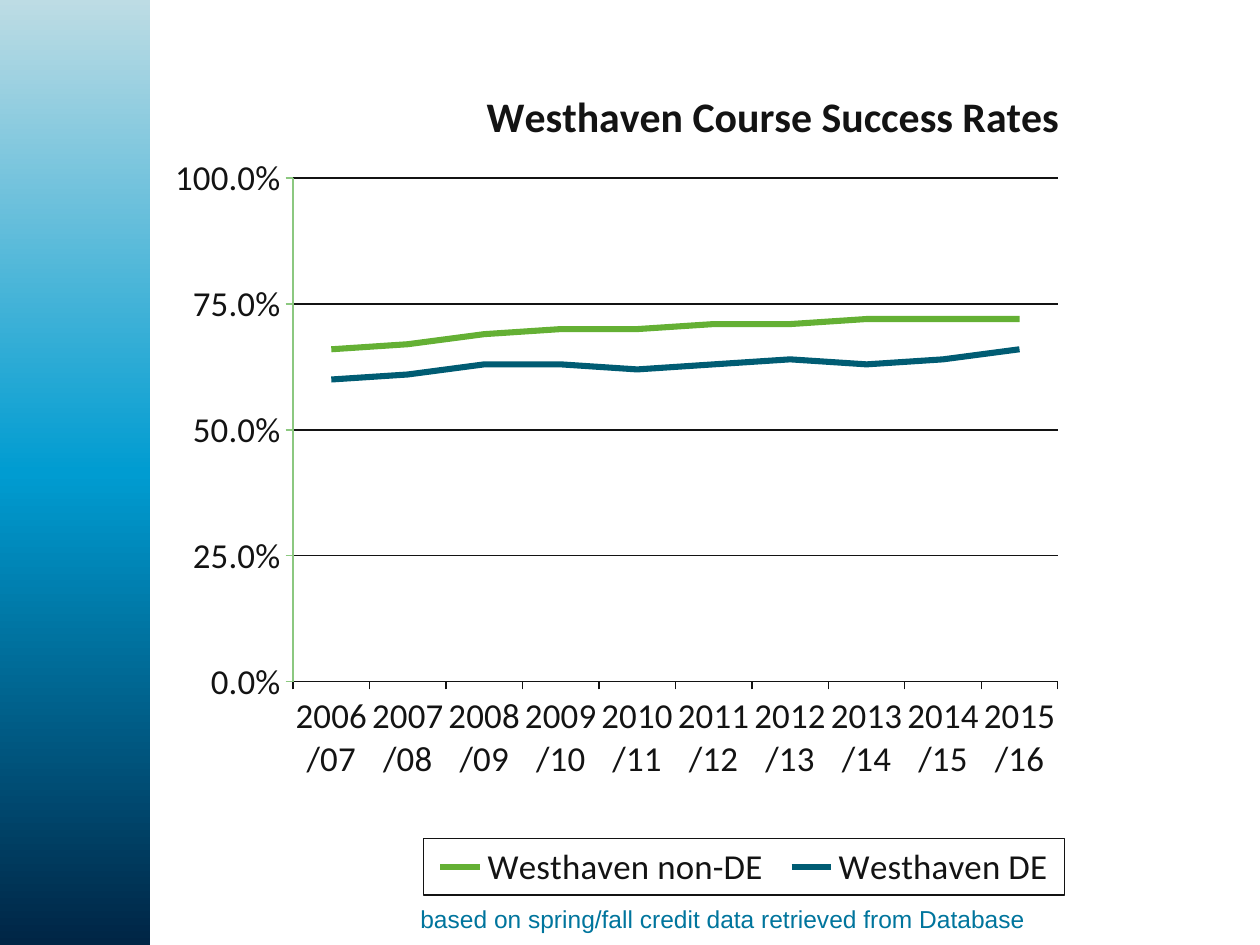
from copy import deepcopy

from pptx import Presentation
from pptx.chart.data import CategoryChartData
from pptx.dml.color import RGBColor
from pptx.enum.chart import XL_CHART_TYPE, XL_LEGEND_POSITION, XL_TICK_MARK
from pptx.enum.shapes import MSO_SHAPE
from pptx.oxml import parse_xml
from pptx.oxml.ns import nsdecls, qn
from pptx.util import Emu, Pt

LINE, BOTTOM = XL_CHART_TYPE.LINE, XL_LEGEND_POSITION.BOTTOM
OUTSIDE, NO_TICK = XL_TICK_MARK.OUTSIDE, XL_TICK_MARK.NONE
RECT = MSO_SHAPE.RECTANGLE

PX = 914400 // 126
INK = RGBColor(0x13, 0x13, 0x13)
GREEN = RGBColor(0x64, 0xB0, 0x34)
PALE_GREEN = RGBColor(0x8C, 0xC8, 0x80)
TEAL = RGBColor(0x00, 0x5C, 0x73)
NOTE_BLUE = RGBColor(0x00, 0x75, 0x9D)
NAVY = RGBColor(0x00, 0x25, 0x45)
SKY = RGBColor(0x00, 0x9C, 0xD1)
MIST = RGBColor(0xBD, 0xDC, 0xE4)

CHART_BOX = (175, 43, 1085, 862)
YEARS = [f"{y}/{(y + 1) % 100:02d}" for y in range(2006, 2016)]
SERIES = [
    ("Westhaven non-DE", GREEN,
     (0.66, 0.67, 0.69, 0.70, 0.70, 0.71, 0.71, 0.72, 0.72, 0.72)),
    ("Westhaven DE", TEAL,
     (0.60, 0.61, 0.63, 0.63, 0.62, 0.63, 0.64, 0.63, 0.64, 0.66)),
]


def box(*lengths):
    return [Emu(n * PX) for n in lengths]


def set_format(obj, values):
    for name, value in values.items():
        setattr(obj, name, value)


def set_font(font, color, **values):
    set_format(font, values)
    font.color.rgb = color


def set_line(line, color, width):
    line.color.rgb = color
    line.width = Pt(width)


def add_side_band(s):
    sp = s.shapes.add_shape(RECT, *box(0, 0, 150, 945))
    sp.shadow.inherit = False
    sp.line.fill.background()
    sp.fill.gradient()
    sp.fill.gradient_angle = 90
    first = sp.fill.gradient_stops[0]._gs
    first.addnext(deepcopy(first))
    for stop, color, pos in zip(sp.fill.gradient_stops,
                                (NAVY, SKY, MIST), (0, 0.5, 1)):
        stop.color.rgb = color
        stop.position = pos


def place(element, index, left, top, width=None, height=None, inner=False):
    """Give a chart part a fixed place, in px on the slide."""
    for old in element.findall(qn("c:layout")):
        element.remove(old)
    x0, y0, w0, h0 = CHART_BOX
    parts = {"x": (left - x0) / w0, "y": (top - y0) / h0}
    if width:
        parts.update(w=width / w0, h=height / h0)
    xml = '<c:layoutTarget val="inner"/>' if inner else ""
    xml += '<c:xMode val="edge"/><c:yMode val="edge"/>'
    xml += "".join(f'<c:{k} val="{v:.4f}"/>' for k, v in parts.items())
    element.insert(index, parse_xml(
        f'<c:layout {nsdecls("c")}><c:manualLayout>{xml}'
        "</c:manualLayout></c:layout>"))


def format_axes(chart):
    cat, val = chart.category_axis, chart.value_axis
    for axis, color in ((cat, INK), (val, PALE_GREEN)):
        set_format(axis, {"major_tick_mark": OUTSIDE,
                          "minor_tick_mark": NO_TICK})
        set_font(axis.tick_labels.font, INK, name="Calibri", size=Pt(20))
        set_line(axis.format.line, color, 0.75)
    set_format(val, {"minimum_scale": 0, "maximum_scale": 1,
                     "major_unit": 0.25, "has_major_gridlines": True})
    set_line(val.major_gridlines.format.line, INK, 0.75)
    set_format(val.tick_labels, {"number_format": "0.0%",
                                 "number_format_is_linked": False})


def add_legend(chart):
    chart.has_legend = True
    legend = chart.legend
    set_format(legend, {"position": BOTTOM, "include_in_layout": False})
    set_font(legend.font, INK, name="Calibri", size=Pt(20))
    place(legend._element, 1, 420, 839, 644, 56)
    legend._element.find(qn("c:txPr")).addprevious(parse_xml(
        f'<c:spPr {nsdecls("c", "a")}><a:noFill/><a:ln w="9525"><a:solidFill>'
        f'<a:srgbClr val="{INK}"/></a:solidFill></a:ln></c:spPr>'))


def add_line_chart(s):
    data = CategoryChartData(number_format="0.0%")
    data.categories = YEARS
    for name, _, values in SERIES:
        data.add_series(name, values)
    chart = s.shapes.add_chart(LINE, *box(*CHART_BOX), data).chart
    set_font(chart.font, INK, name="Calibri", size=Pt(10))

    # Title
    tf = chart.chart_title.text_frame
    tf.text = "Westhaven Course Success Rates"
    set_font(tf.paragraphs[0].runs[0].font, INK,
             name="Calibri", size=Pt(24), bold=True)
    place(chart.chart_title._element, 1, 476, 81)

    # Lines
    plot = chart.plots[0]
    plot.vary_by_categories = False
    for series, (_, color, _) in zip(plot.series, SERIES):
        series.smooth = False
        set_line(series.format.line, color, 3.5)
    place(plot._element.getparent(), 0, 289, 178, 768, 504, inner=True)

    format_axes(chart)
    add_legend(chart)


def add_note(s, text):
    tf = s.shapes.add_textbox(*box(408, 898, 670, 43)).text_frame
    tf.word_wrap = True
    r = tf.paragraphs[0].add_run()
    r.text = text
    set_font(r.font, NOTE_BLUE, name="Arial", size=Pt(14))


def main():
    prs = Presentation()
    prs.slide_width, prs.slide_height = box(1260, 945)
    s = prs.slides.add_slide(prs.slide_layouts[6])
    add_side_band(s)
    add_line_chart(s)
    add_note(s, "based on spring/fall credit data retrieved from Database")
    prs.save("out.pptx")


if __name__ == "__main__":
    main()
